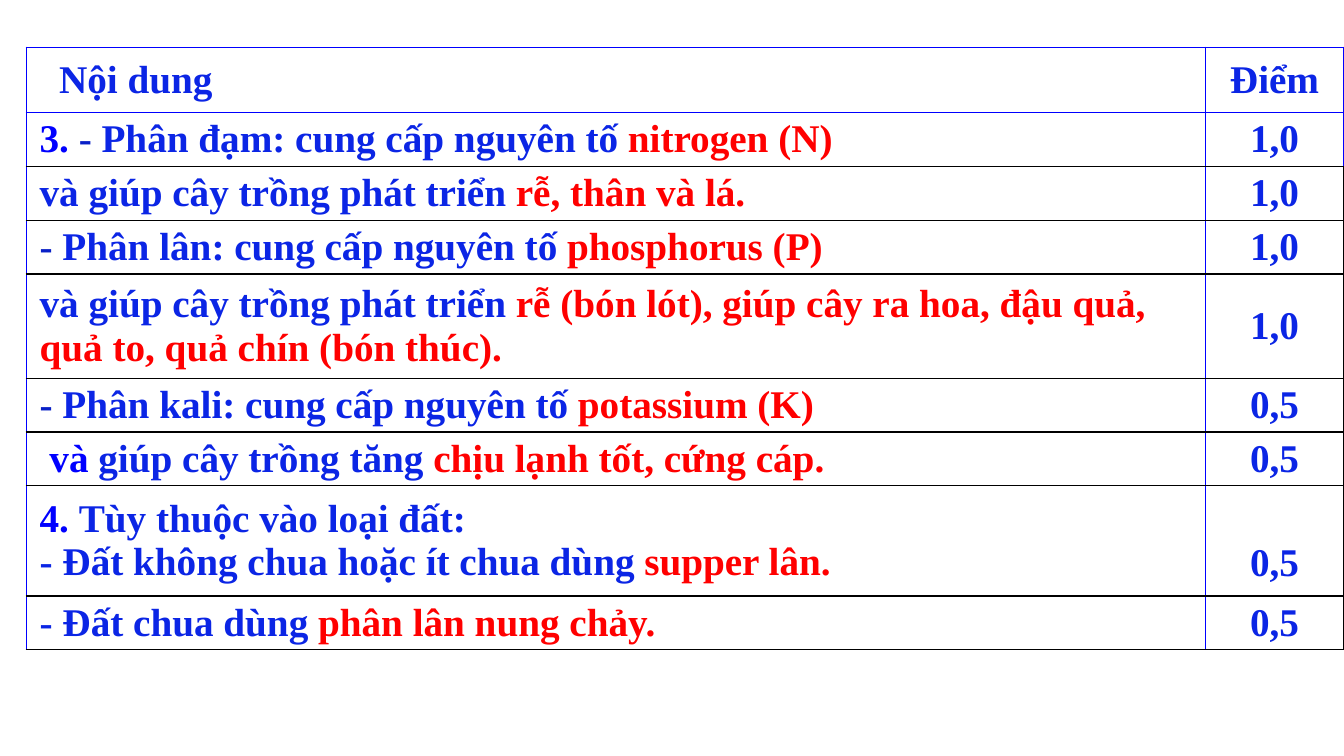
from lxml import etree
from pptx import Presentation
from pptx import util as u
from pptx.dml.color import RGBColor
from pptx.enum import text
from pptx.oxml import ns

COLOURS = {
    "text": "0B25E5",
    "dash": "0920C7",
    "blue": "0000FF",
    "answer": "FF0000",
    "black": "000000",
}
COLUMN_WIDTHS = (29.72, 3.48)
ROW = 1.35

# Each row: height in cm, paragraphs made of (text, colour) runs, points
ROWS = [
    (1.65, [[("Nội dung", "text")]], "Điểm"),
    (ROW, [[("3. ", "blue"), ("- ", "dash"),
            ("Phân đạm: cung cấp nguyên tố ", "text"),
            ("nitrogen (N)", "answer")]], "1,0"),
    (ROW, [[("và giúp cây trồng phát triển ", "text"),
            ("rễ, thân và lá.", "answer")]], "1,0"),
    (ROW, [[("- ", "dash"), ("Phân lân: cung cấp nguyên tố ", "text"),
            ("phosphorus (P)", "answer")]], "1,0"),
    (2.63, [[("và giúp cây trồng phát triển ", "text"),
             ("rễ (bón lót), giúp cây ra hoa, đậu quả, quả to, "
              "quả chín (bón thúc).", "answer")]], "1,0"),
    (ROW, [[("- ", "dash"), ("Phân kali: cung cấp nguyên tố ", "text"),
            ("potassium (K)", "answer")]], "0,5"),
    (ROW, [[(" và ", "blue"), ("giúp cây trồng tăng ", "text"),
            ("chịu lạnh tốt, cứng cáp.", "answer")]], "0,5"),
    (2.78, [[("4. ", "blue"), ("Tùy thuộc vào loại đất:", "text")],
            [("- Đất không chua hoặc ít chua dùng", "text"),
             (" supper lân.", "answer")]], "0,5"),
    (ROW, [[("- Đất chua dùng ", "text"),
            ("phân lân nung chảy.", "answer")]], "0,5"),
]
HEADER_ROW, SOIL_ROW = 0, 7


def set_borders(cell, left, right, top, bottom):
    properties = cell._tc.get_or_add_tcPr()
    sides = {"a:lnL": left, "a:lnR": right, "a:lnT": top, "a:lnB": bottom}
    for tag, colour in sides.items():
        line = etree.SubElement(properties, ns.qn(tag), w=str(u.Pt(1)))
        fill = etree.SubElement(line, ns.qn("a:solidFill"))
        etree.SubElement(fill, ns.qn("a:srgbClr"), val=COLOURS[colour])


def format_cell(cell, row_index):
    cell.vertical_anchor = text.MSO_ANCHOR.MIDDLE
    cell.margin_left = cell.margin_right = u.Cm(0.34)
    cell.margin_top = cell.margin_bottom = u.Cm(0.13)
    inner = "blue" if row_index <= 1 else "black"
    bottom = "blue" if row_index == HEADER_ROW else "black"
    set_borders(cell, "blue", inner, inner, bottom)
    cell.fill.background()


def write_cell(cell, paragraphs, alignment):
    frame = cell.text_frame
    for index, runs in enumerate(paragraphs):
        paragraph = frame.add_paragraph() if index else frame.paragraphs[0]
        paragraph.alignment = alignment
        paragraph.font.name = "Times New Roman"
        paragraph.font.size = u.Pt(28)
        paragraph.font.bold = True
        for words, colour in runs:
            run = paragraph.add_run()
            run.text = words
            run.font.color.rgb = RGBColor.from_string(COLOURS[colour])


def add_marking_table(slide):
    height = sum(row[0] for row in ROWS)
    table = slide.shapes.add_table(
        len(ROWS), len(COLUMN_WIDTHS), u.Cm(0.66), u.Cm(1.19),
        u.Cm(sum(COLUMN_WIDTHS)), u.Cm(height)).table
    table.first_row = table.horz_banding = False
    for column, width in zip(table.columns, COLUMN_WIDTHS):
        column.width = u.Cm(width)
    for index, (row_height, paragraphs, points) in enumerate(ROWS):
        table.rows[index].height = u.Cm(row_height)
        content_cell, points_cell = table.rows[index].cells
        format_cell(content_cell, index)
        format_cell(points_cell, index)
        justified = index >= SOIL_ROW
        write_cell(content_cell, paragraphs,
                   text.PP_ALIGN.JUSTIFY if justified else text.PP_ALIGN.LEFT)
        write_cell(points_cell, [[(points, "text")]], text.PP_ALIGN.CENTER)
    table.cell(HEADER_ROW, 0).margin_left = u.Cm(0.83)
    # The points stand level with the second line of the answer
    soil_points = table.cell(SOIL_ROW, 1)
    soil_points.vertical_anchor = text.MSO_ANCHOR.BOTTOM
    soil_points.margin_bottom = u.Cm(0.28)


def main():
    presentation = Presentation()
    presentation.slide_width = u.Cm(33.87)
    presentation.slide_height = u.Cm(19.05)
    slide = presentation.slides.add_slide(presentation.slide_layouts[6])
    add_marking_table(slide)
    presentation.save("out.pptx")


if __name__ == "__main__":
    main()
